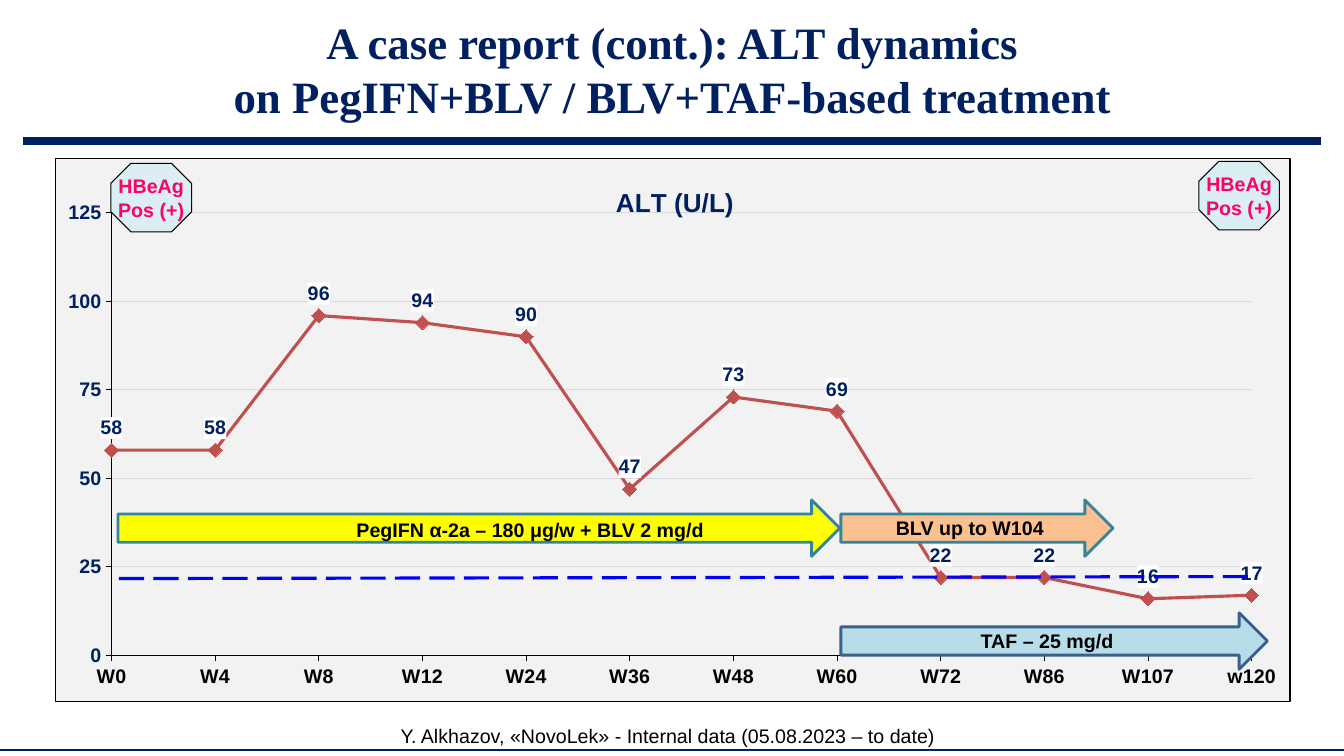
from lxml import etree
from pptx import Presentation
from pptx.chart import data
from pptx.dml.color import RGBColor
from pptx.enum import chart as ch, dml, shapes, text
from pptx.oxml import parse_xml
from pptx.oxml.ns import nsdecls, qn
from pptx.util import Inches, Pt

COLORS = {
    "navy": "002060", "black": "000000", "white": "FFFFFF", "panel": "F2F2F2",
    "grid": "D9D9D9", "alt": "C0504D", "limit": "0000FF", "yellow": "FFFF00",
    "orange": "FAC090", "blue": "B7DEE8", "teal": "31859C", "steel": "3A5F8C",
    "badge": "DBEEF4", "pink": "FF0066",
}
WEEKS = ["W0", "W4", "W8", "W12", "W24", "W36", "W48", "W60", "W72", "W86", "W107", "w120"]
ALT = [58, 58, 96, 94, 90, 47, 73, 69, 22, 22, 16, 17]


def rgb(name):
    return RGBColor.from_string(COLORS[name])


def set_font(font, size, color, bold=True, name="Arial"):
    font.size, font.bold, font.name = Pt(size), bold, name
    font.color.rgb = rgb(color)


def set_line(line, color, width):
    line.color.rgb = rgb(color)
    line.width = Pt(width)


def write(tf, words, size, color, bold=True, name="Arial", wrap=True):
    tf.text = words
    tf.word_wrap = wrap
    tf.vertical_anchor = text.MSO_ANCHOR.MIDDLE
    for p in tf.paragraphs:
        p.alignment = text.PP_ALIGN.CENTER
        for r in p.runs:
            set_font(r.font, size, color, bold, name)


def add_line(s, x1, y1, x2, y2, color, width):
    c = s.shapes.add_connector(shapes.MSO_CONNECTOR.STRAIGHT,
                               Inches(x1), Inches(y1), Inches(x2), Inches(y2))
    set_line(c.line, color, width)
    etree.SubElement(c._element.spPr, qn("a:effectLst"))
    return c


def add_shape(s, kind, x, y, w, h, fill, line, width):
    sp = s.shapes.add_shape(kind, Inches(x), Inches(y), Inches(w), Inches(h))
    sp.shadow.inherit = False
    sp.fill.solid()
    sp.fill.fore_color.rgb = rgb(fill)
    set_line(sp.line, line, width)
    tf = sp.text_frame
    tf.margin_left = tf.margin_right = tf.margin_top = tf.margin_bottom = 0
    return sp


def add_label(s, x, y, w, h, words, bold):
    sp = s.shapes.add_textbox(Inches(x), Inches(y), Inches(w), Inches(h))
    write(sp.text_frame, words, 14, "black", bold)


def chart_box(fill, line=None):
    border = (f'<a:ln w="9525"><a:solidFill><a:srgbClr val="{COLORS[line]}"/></a:solidFill></a:ln>'
              if line else '<a:ln><a:noFill/></a:ln>')
    return parse_xml(f'<c:spPr {nsdecls("c", "a")}><a:solidFill><a:srgbClr val="{COLORS[fill]}"/>'
                     f'</a:solidFill>{border}</c:spPr>')


def set_layout(parent, index, **values):
    old = parent.find(qn("c:layout"))
    if old is not None:
        parent.remove(old)
    items = "".join(f'<c:{k} val="{v}"/>' for k, v in values.items())
    parent.insert(index, parse_xml(
        f'<c:layout {nsdecls("c")}><c:manualLayout>{items}</c:manualLayout></c:layout>'))


def add_title(s, x, y, w, h):
    sp = s.shapes.title
    sp.left, sp.top, sp.width, sp.height = Inches(x), Inches(y), Inches(w), Inches(h)
    write(sp.text_frame, "A case report (cont.): ALT dynamics\v"
          "on PegIFN+BLV / BLV+TAF-based treatment", 32, "navy", name="Times New Roman")
    add_line(s, 0.23, y + 1.4, 13.1, y + 1.4, "navy", 6)


def style_axis(axis, color):
    set_font(axis.tick_labels.font, 14, color)
    set_line(axis.format.line, "black", 0.75)
    axis.major_tick_mark = ch.XL_TICK_MARK.OUTSIDE
    axis.minor_tick_mark = ch.XL_TICK_MARK.NONE


def style_series(series):
    series.smooth = False
    set_line(series.format.line, "alt", 2.25)
    marker = series.marker
    marker.style, marker.size = ch.XL_MARKER_STYLE.DIAMOND, 10
    marker.format.fill.solid()
    marker.format.fill.fore_color.rgb = rgb("alt")
    set_line(marker.format.line, "alt", 0.75)
    labels = series.data_labels
    labels.show_value = True
    labels.position = ch.XL_LABEL_POSITION.ABOVE
    set_font(labels.font, 14, "navy")
    labels._element.find(qn("c:txPr")).addprevious(chart_box("white"))


def add_alt_chart(s, x, y, w, h):
    cd = data.CategoryChartData()
    cd.categories = WEEKS
    cd.add_series("ALT (U/L)", ALT)
    chart = s.shapes.add_chart(ch.XL_CHART_TYPE.LINE_MARKERS, Inches(x), Inches(y),
                               Inches(w), Inches(h), cd).chart
    set_font(chart.font, 10, "navy", False)
    chart.has_legend = False
    chart.plots[0].vary_by_categories = False
    style_series(chart.plots[0].series[0])

    chart.has_title = True
    title = chart.chart_title
    title.text_frame.text = "ALT (U/L)"
    set_font(title.text_frame.paragraphs[0].runs[0].font, 18.6, "navy")
    title.include_in_layout = False
    set_layout(title._element, 1, xMode="edge", yMode="edge", x=0.45, y=0.04)

    style_axis(chart.category_axis, "black")
    axis = chart.value_axis
    style_axis(axis, "navy")
    axis.minimum_scale, axis.maximum_scale, axis.major_unit = 0, 125, 25
    axis.has_major_gridlines = True
    set_line(axis.major_gridlines.format.line, "grid", 0.75)
    for old in axis._element.findall(qn("c:crossBetween")):
        axis._element.remove(old)
    axis._element.find(qn("c:crosses")).addnext(
        parse_xml(f'<c:crossBetween {nsdecls("c")} val="midCat"/>'))

    space = chart._chartSpace
    space.chart.addnext(chart_box("panel", "black"))
    area = space.chart.plotArea
    set_layout(area, 0, layoutTarget="inner", xMode="edge", yMode="edge",
               x=0.045, y=0.1, w=0.924, h=0.816)
    area.append(chart_box("panel"))


def add_treatments(s, x, y):
    limit = add_line(s, x + 0.01, y + 0.78, x + 11.27, y + 0.76, "limit", 2.25)
    limit.line.dash_style = dml.MSO_LINE.LONG_DASH
    arrows = [
        (0, 0, 7.16, "yellow", "teal", ""),
        (7.17, 0, 2.7, "orange", "teal", "BLV up to W104"),
        (7.17, 1.12, 4.23, "blue", "steel", "TAF – 25 mg/d"),
    ]
    for dx, dy, w, fill, line, words in arrows:
        sp = add_shape(s, shapes.MSO_SHAPE.RIGHT_ARROW, x + dx, y + dy, w, 0.56, fill, line, 2)
        if words:
            write(sp.text_frame, words, 14, "black")
    add_label(s, x + 1.41, y + 0.12, 5.36, 0.34, "PegIFN α-2a – 180 μg/w + BLV 2 mg/d", True)


def add_badge(s, x, y, w, h):
    sp = add_shape(s, shapes.MSO_SHAPE.OCTAGON, x, y, w, h, "badge", "black", 0.75)
    write(sp.text_frame, "HBeAg\nPos (+)", 14, "pink", wrap=False)


def main():
    prs = Presentation()
    prs.slide_width, prs.slide_height = Inches(13.33), Inches(7.5)
    s = prs.slides.add_slide(prs.slide_layouts[5])
    add_title(s, 0.67, 0, 12, 1.36)
    add_line(s, 0, 7.44, 13.33, 7.44, "navy", 1)
    add_alt_chart(s, 0.55, 1.57, 12.25, 5.39)
    add_label(s, 1.89, 7.13, 9.47, 0.34,
              "Y. Alkhazov, «NovoLek» - Internal data (05.08.2023 – to date)", False)
    add_treatments(s, 1.17, 4.96)
    add_badge(s, 1.1, 1.62, 0.8, 0.68)
    add_badge(s, 11.89, 1.6, 0.8, 0.68)
    prs.save("out.pptx")


if __name__ == "__main__":
    main()
